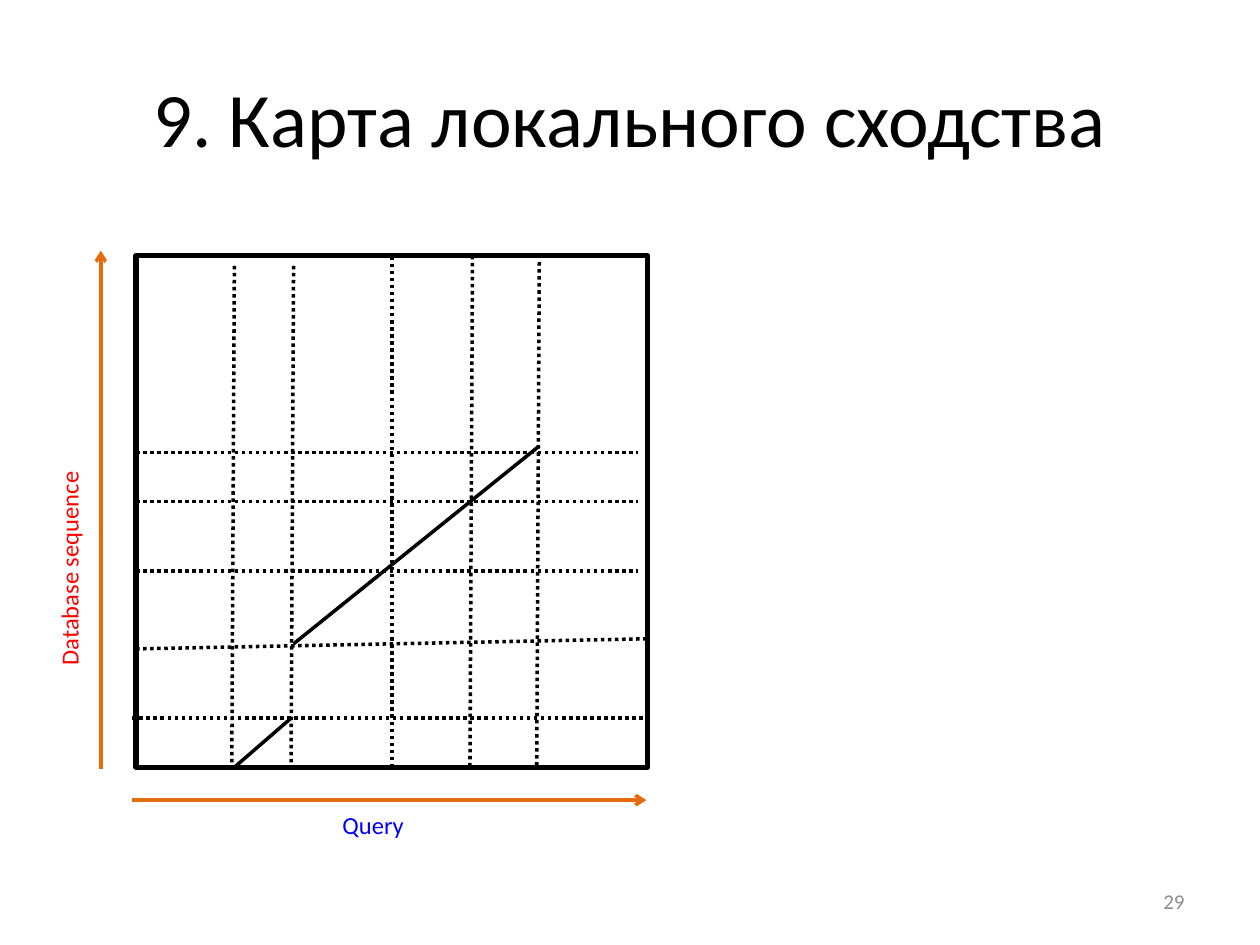
"""Build the local similarity map slide."""
from dataclasses import dataclass

from lxml import etree
from pptx import Presentation
from pptx.dml.color import RGBColor
from pptx.enum.dml import MSO_LINE
from pptx.enum.shapes import MSO_CONNECTOR, MSO_SHAPE
from pptx.enum.text import MSO_ANCHOR, PP_ALIGN
from pptx.oxml.ns import qn
from pptx.util import Pt

PX = 9144
FONT = "Calibri"
STRAIGHT = MSO_CONNECTOR.STRAIGHT
DOTTED = MSO_LINE.ROUND_DOT
RECTANGLE = MSO_SHAPE.RECTANGLE
LEFT, CENTER, RIGHT = PP_ALIGN.LEFT, PP_ALIGN.CENTER, PP_ALIGN.RIGHT
TOP, MIDDLE = MSO_ANCHOR.TOP, MSO_ANCHOR.MIDDLE
COLORS = {
    "ink": "000000",
    "axis": "E46C0A",
    "query": "0000FF",
    "database": "FF0000",
    "number": "8C8C8C",
}


@dataclass(frozen=True)
class Segment:
    x1: int
    y1: int
    x2: int
    y2: int
    color: str = "ink"
    dotted: bool = False
    arrow: bool = False


@dataclass(frozen=True)
class Label:
    text: str
    left: int
    top: int
    width: int
    height: int
    size: int
    color: str
    align: PP_ALIGN = LEFT
    anchor: MSO_ANCHOR = TOP
    rotation: int = 0


FRAME = (108, 203, 406, 406)
MATCHES = [Segment(186, 609, 231, 570), Segment(233, 511, 428, 354)]
COLUMNS = [
    Segment(*ends, dotted=True)
    for ends in [
        (186, 211, 184, 607),
        (233, 211, 231, 607),
        (311, 609, 311, 203),
        (375, 203, 373, 607),
        (428, 208, 426, 607),
    ]
]
ROWS = [Segment(108, y, 506, y, dotted=True) for y in (359, 398, 453)] + [
    Segment(108, 515, 514, 507, dotted=True),
    Segment(105, 570, 511, 570, dotted=True),
]
AXES = [
    Segment(105, 635, 513, 635, color="axis", arrow=True),
    Segment(80, 610, 80, 199, color="axis", arrow=True),
]
LABELS = [
    Label("Query", 262, 638, 74, 33, 14, "query"),
    Label("Database sequence", -42, 425, 193, 33, 14, "database", rotation=270),
    Label("29", 717, 695, 233, 40, 12, "number", RIGHT, MIDDLE),
]


def color_of(name: str) -> RGBColor:
    return RGBColor.from_string(COLORS[name])


def write_text(box, text: str, *, size: int, color: str,
               align: PP_ALIGN, anchor: MSO_ANCHOR, wrap: bool) -> None:
    frame = box.text_frame
    frame.word_wrap = wrap
    frame.vertical_anchor = anchor
    para = frame.paragraphs[0]
    para.alignment = align
    span = para.add_run()
    span.text = text
    span.font.name = FONT
    span.font.size = Pt(size)
    span.font.color.rgb = color_of(color)


def draw_segment(shapes, segment: Segment) -> None:
    ends = (segment.x1, segment.y1, segment.x2, segment.y2)
    connector = shapes.add_connector(STRAIGHT, *(end * PX for end in ends))
    line = connector.line
    line.color.rgb = color_of(segment.color)
    line.width = Pt(2)
    if segment.dotted:
        line.dash_style = DOTTED
    properties = connector._element.spPr
    if segment.arrow:
        outline = properties.find(qn("a:ln"))
        etree.SubElement(outline, qn("a:tailEnd"), type="arrow")
    etree.SubElement(properties, qn("a:effectLst"))


def draw_frame(shapes) -> None:
    square = shapes.add_shape(RECTANGLE, *(length * PX for length in FRAME))
    square.shadow.inherit = False
    square.fill.background()
    square.line.color.rgb = color_of("ink")
    square.line.width = Pt(3)


def draw_label(shapes, label: Label) -> None:
    place = (label.left, label.top, label.width, label.height)
    box = shapes.add_textbox(*(length * PX for length in place))
    box.rotation = label.rotation
    write_text(box, label.text, size=label.size, color=label.color,
               align=label.align, anchor=label.anchor, wrap=False)


def main() -> None:
    deck = Presentation()
    deck.slide_width, deck.slide_height = 1000 * PX, 750 * PX
    page = deck.slides.add_slide(deck.slide_layouts[5])
    title = page.shapes.title
    title.left, title.top = 50 * PX, 30 * PX
    title.width, title.height = 900 * PX, 125 * PX
    write_text(title, "9. Карта локального сходства", size=44, color="ink",
               align=CENTER, anchor=MIDDLE, wrap=True)

    similarity_map = page.shapes.add_group_shape().shapes
    draw_frame(similarity_map)
    for segment in MATCHES + COLUMNS + ROWS:
        draw_segment(similarity_map, segment)
    for axis in AXES:
        draw_segment(page.shapes, axis)
    for label in LABELS:
        draw_label(page.shapes, label)
    deck.save("out.pptx")


if __name__ == "__main__":
    main()
